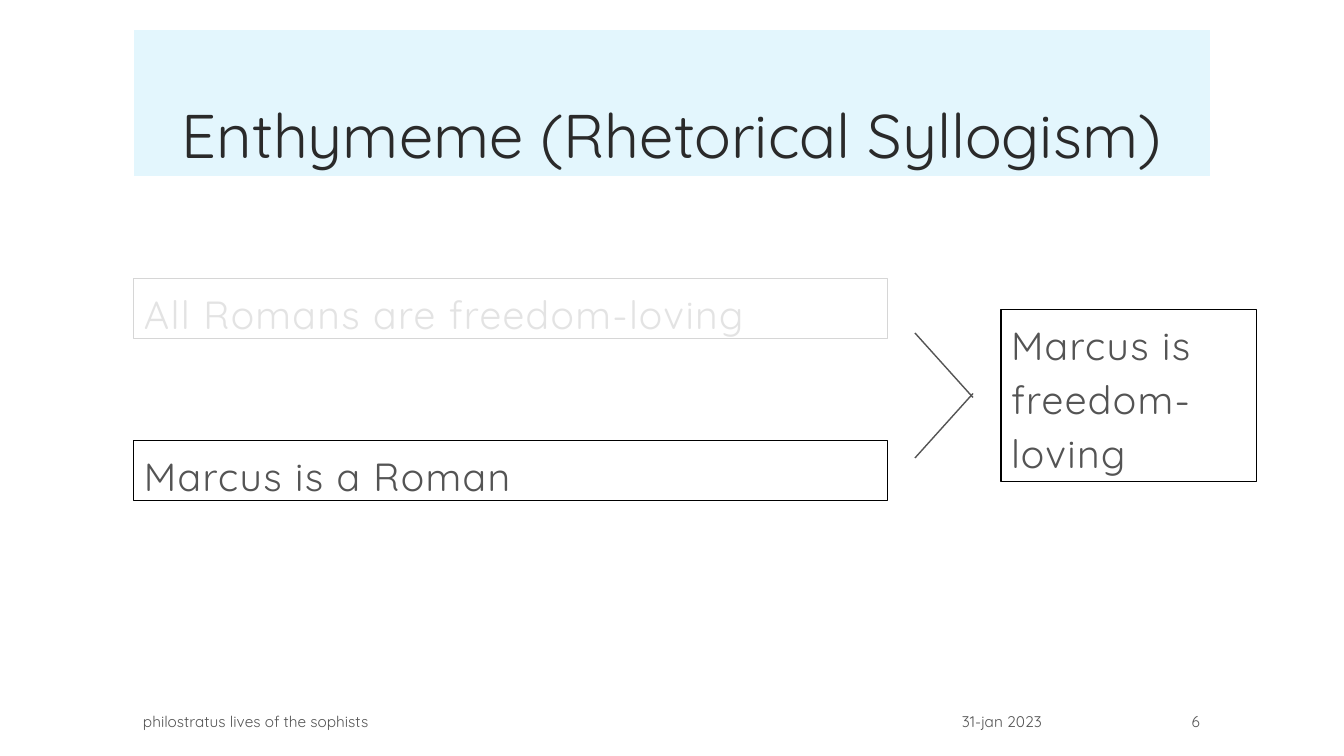
from lxml import etree
from pptx import Presentation
from pptx.dml.color import RGBColor
from pptx.enum.shapes import MSO_CONNECTOR, MSO_SHAPE
from pptx.enum.text import MSO_ANCHOR as ANCHOR, PP_ALIGN as ALIGN
from pptx.oxml.ns import qn
from pptx.util import Pt

WIDTH, HEIGHT = 1344, 756
EMU_PER_PX = 12192000 / WIDTH
FONT = "Quicksand"
COLORS = {
    "banner": "00B0F0",
    "title": "2A2A2A",
    "body": "545454",
    "border": "000000",
    "veil": "FFFFFF",
}


def px(length):
    return round(length * EMU_PER_PX)


def rgb(name):
    return RGBColor.from_string(COLORS[name])


def add_box(slide, box, fill=None, opacity=100, border=None):
    shape = slide.shapes.add_shape(MSO_SHAPE.RECTANGLE, *map(px, box))
    shape.shadow.inherit = False
    if fill:
        shape.fill.solid()
        shape.fill.fore_color.rgb = rgb(fill)
        color = shape.fill._xPr.find(qn("a:solidFill"))[0]
        etree.SubElement(color, qn("a:alpha"), val=str(opacity * 1000))
    else:
        shape.fill.background()
    if border:
        shape.line.color.rgb = rgb(border)
        shape.line.width = Pt(0.75)
    else:
        shape.line.fill.background()
    return shape


def write(shape, text, size=28, color="body", align=ALIGN.LEFT,
          anchor=ANCHOR.TOP, line_spacing=None, tracking=0, inset=(10, 5)):
    frame = shape.text_frame
    frame.word_wrap = True
    frame.vertical_anchor = anchor
    frame.margin_left = frame.margin_right = px(inset[0])
    frame.margin_top = frame.margin_bottom = px(inset[1])
    paragraph = frame.paragraphs[0]
    paragraph.alignment = align
    if line_spacing:
        paragraph.line_spacing = line_spacing
    run = paragraph.add_run()
    run.text = text
    run.font.name = FONT
    run.font.size = Pt(size)
    run.font.color.rgb = rgb(color)
    if tracking:
        run._r.get_or_add_rPr().set("spc", str(tracking * 100))


def add_title(slide, box, text):
    banner = add_box(slide, box, fill="banner", opacity=11)
    write(banner, text, size=44, color="title", align=ALIGN.CENTER,
          anchor=ANCHOR.BOTTOM, line_spacing=1.14)


def add_statement(slide, box, text):
    statement = add_box(slide, box, border="border")
    write(statement, text, line_spacing=1.14, tracking=1)


def add_inference(slide, box):
    """Two strokes that meet, crossing slightly, at the right edge."""
    left, top, width, height = box
    middle, overlap = top + height / 2, 2
    for start, end in ((top, middle + overlap),
                       (top + height, middle - overlap)):
        stroke = slide.shapes.add_connector(
            MSO_CONNECTOR.STRAIGHT,
            px(left), px(start), px(left + width), px(end))
        stroke.line.color.rgb = rgb("body")
        stroke.line.width = Pt(1)
        etree.SubElement(stroke._element.spPr, qn("a:effectLst"))


def add_syllogism(slide, box, premises, conclusion):
    left, top, width, height = box
    premise_width, premise_height, step = 754, 60, 162

    # Premises
    for row, premise in enumerate(premises):
        add_statement(slide, (left, top + row * step, premise_width,
                              premise_height), premise)

    # Inference and conclusion
    add_inference(slide, (left + 781, top + 54, 58, 125))
    add_statement(slide, (left + 867, top + 31, width - 867, 172), conclusion)

    # Veil over the unspoken first premise
    add_box(slide, (left - 14, top - 15, premise_width + 33,
                    premise_height + 30), fill="veil", opacity=84)


def add_footer(slide, box, source, date, number):
    left, top, width, height = box
    for offset, part_width, text, align in (
            (0, 732, source, ALIGN.LEFT),
            (765, 154, date, ALIGN.RIGHT),
            (width - 126, 126, number, ALIGN.RIGHT)):
        part = slide.shapes.add_textbox(
            px(left + offset), px(top), px(part_width), px(height))
        write(part, text, size=11, align=align, anchor=ANCHOR.MIDDLE,
              inset=(10, 0))


def main():
    deck = Presentation()
    deck.slide_width, deck.slide_height = px(WIDTH), px(HEIGHT)
    slide = deck.slides.add_slide(deck.slide_layouts[6])

    add_title(slide, (134, 30, 1076, 146), "Enthymeme (Rhetorical Syllogism)")
    add_syllogism(slide, (134, 279, 1123, 222),
                  ("All Romans are freedom-loving", "Marcus is a Roman"),
                  "Marcus is freedom-loving")
    add_footer(slide, (133, 711, 1077, 20),
               "philostratus lives of the sophists", "31-jan 2023", "6")
    deck.save("out.pptx")


if __name__ == "__main__":
    main()
